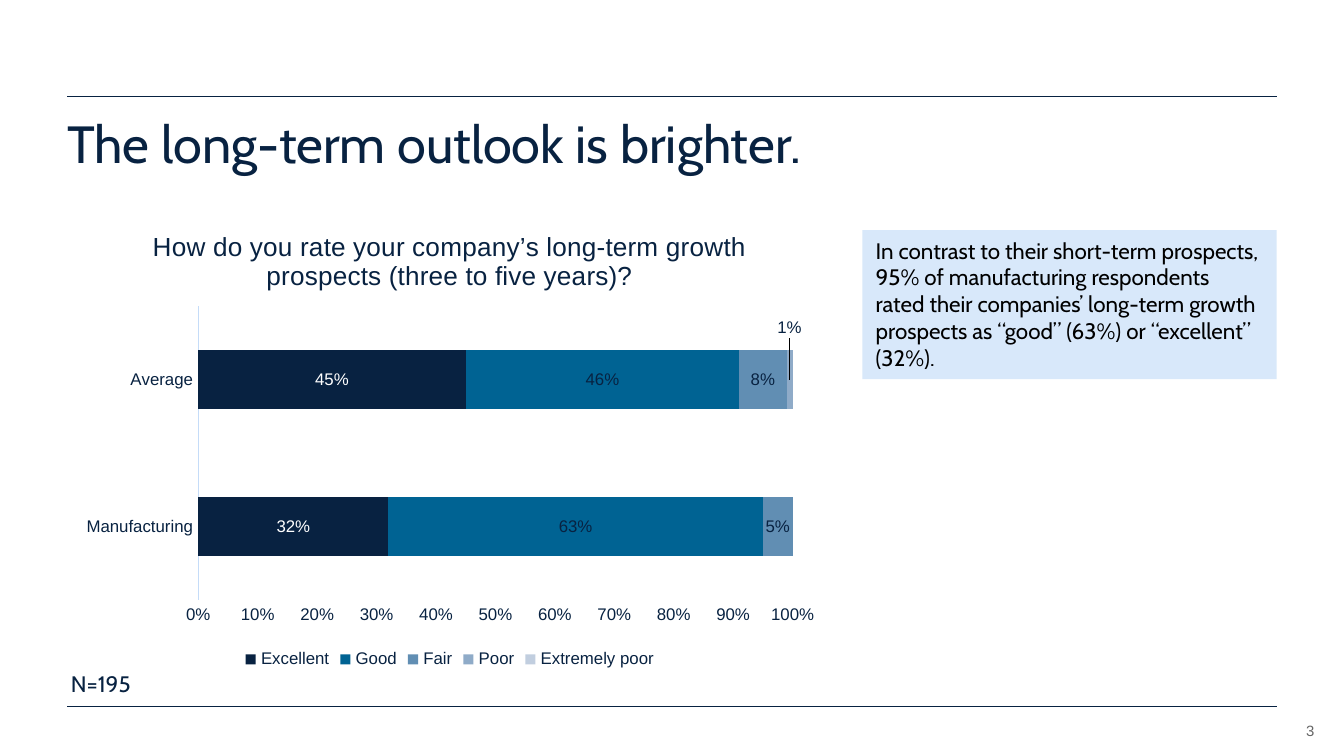
from collections import namedtuple

from lxml.etree import SubElement
from pptx import Presentation
from pptx.chart.data import CategoryChartData
from pptx.dml.color import RGBColor
from pptx.enum.chart import XL_CHART_TYPE as ChartType
from pptx.enum.chart import XL_LABEL_POSITION as LabelPosition
from pptx.enum.chart import XL_LEGEND_POSITION as LegendPosition
from pptx.enum.chart import XL_TICK_MARK as TickMark
from pptx.enum.shapes import MSO_CONNECTOR as Connector
from pptx.enum.shapes import MSO_SHAPE as Shape
from pptx.enum.text import MSO_ANCHOR as Anchor
from pptx.enum.text import MSO_AUTO_SIZE as AutoSize
from pptx.enum.text import PP_ALIGN as Align
from pptx.oxml import parse_xml
from pptx.oxml.ns import nsdecls, qn
from pptx.util import Cm, Pt

Box = namedtuple("Box", "left top width height")

COLORS = {
    "navy": "082241",
    "blue": "006393",
    "steel": "618EB3",
    "mist": "8FABC8",
    "haze": "C1CEDF",
    "axis": "C5DCF8",
    "panel": "D8E8FA",
    "gray": "666666",
    "black": "000000",
    "white": "FFFFFF",
}
CATEGORIES = ["Manufacturing", "Average"]
RATINGS = [
    ("Excellent", [0.32, 0.45], "navy", "white"),
    ("Good", [0.63, 0.46], "blue", "navy"),
    ("Fair", [0.05, 0.08], "steel", "navy"),
    ("Poor", [0, 0.01], "mist", None),
    ("Extremely poor", [0, None], "haze", None),
]


def rgb(name):
    """Return the named colour."""
    return RGBColor.from_string(COLORS[name])


def set_font(font, size, color="navy", face="Arial"):
    """Apply size, colour and typeface to a font."""
    font.name, font.size, font.bold = face, Pt(size), False
    font.color.rgb = rgb(color)


def add_text(page, box, text, size, color="navy", face="Cabin", inset=True):
    """Add a wrapped single-paragraph text box and return its frame."""
    frame = page.shapes.add_textbox(*map(Cm, box)).text_frame
    frame.word_wrap = True
    if not inset:
        frame.margin_left = frame.margin_right = 0
        frame.margin_top = frame.margin_bottom = 0
    para = frame.paragraphs[0]
    para.text = text
    set_font(para.font, size, color, face)
    return frame


def add_rules(page, box):
    """Draw a thin rule along the top and the bottom of the box."""
    for y in (box.top, box.top + box.height):
        ends = (box.left, y, box.left + box.width, y)
        rule = page.shapes.add_connector(Connector.STRAIGHT, *map(Cm, ends))
        rule.line.color.rgb = rgb("navy")
        rule.line.width = Pt(0.5)
        SubElement(rule._element.spPr, qn("a:effectLst"))


def add_heading(page, box):
    """Add the slide title."""
    frame = add_text(page, box, "The long-term outlook is brighter.", 28, inset=False)
    frame.paragraphs[0].line_spacing = 0.9


def add_callout(page, box):
    """Add the shaded panel with the finding."""
    panel = page.shapes.add_shape(Shape.RECTANGLE, *map(Cm, box))
    panel.shadow.inherit = False
    panel.fill.solid()
    panel.fill.fore_color.rgb = rgb("panel")
    panel.line.fill.background()
    frame = panel.text_frame
    frame.word_wrap = True
    frame.auto_size = AutoSize.SHAPE_TO_FIT_TEXT
    frame.vertical_anchor = Anchor.TOP
    para = frame.paragraphs[0]
    para.text = (
        "In contrast to their short-term prospects, 95% of manufacturing "
        "respondents rated their companies’ long-term growth prospects as "
        "“good” (63%) or “excellent” (32%)."
    )
    para.alignment = Align.LEFT
    set_font(para.font, 12, "black", "Cabin")


def manual_layout(**settings):
    """Build a chart layout element from its settings."""
    parts = "".join(f'<c:{key} val="{value}"/>' for key, value in settings.items())
    return parse_xml(
        f'<c:layout {nsdecls("c")}><c:manualLayout>{parts}</c:manualLayout></c:layout>'
    )


def place_plot(chart):
    """Fix the inner plot area within the chart."""
    area = chart._chartSpace.chart.plotArea
    for layout in area.findall(qn("c:layout")):
        area.remove(layout)
    area.insert(0, manual_layout(
        layoutTarget="inner", xMode="edge", yMode="edge", x=0.17, y=0.21, w=0.78, h=0.63
    ))


def style_axes(chart):
    """Style both axes without tick marks or gridlines."""
    for axis in (chart.category_axis, chart.value_axis):
        axis.has_major_gridlines = False
        axis.major_tick_mark = axis.minor_tick_mark = TickMark.NONE
        set_font(axis.tick_labels.font, 9)
    line = chart.category_axis.format.line
    line.color.rgb = rgb("axis")
    line.width = Pt(0.75)
    scale = chart.value_axis
    scale.minimum_scale, scale.maximum_scale, scale.major_unit = 0, 1, 0.1
    scale.format.line.fill.background()
    scale.tick_labels.number_format = "0%"
    scale.tick_labels.number_format_is_linked = False


def style_series(plot):
    """Colour the series and label their values."""
    plot.gap_width, plot.overlap = 150, 100
    plot.vary_by_categories = False
    for series, (name, values, color, label_color) in zip(plot.series, RATINGS):
        series.format.fill.solid()
        series.format.fill.fore_color.rgb = rgb(color)
        if label_color:
            labels = series.data_labels
            labels.show_value = True
            labels.position = LabelPosition.CENTER
            labels.number_format, labels.number_format_is_linked = "0%", False
            set_font(labels.font, 9, label_color)
        elif name == "Poor":
            series.data_labels.show_value = False
            label = series.points[1].data_label
            label.position = LabelPosition.CENTER
            set_font(label.font, 9)
            element = series.data_labels._element.find(qn("c:dLbl"))
            element.insert(1, manual_layout(x=0, y=-0.11))


def add_rating_chart(page, box):
    """Add the stacked bar chart of growth ratings."""
    data = CategoryChartData(number_format="0%")
    data.categories = CATEGORIES
    for name, values, *_ in RATINGS:
        data.add_series(name, values)
    frame = page.shapes.add_chart(ChartType.BAR_STACKED_100, *map(Cm, box), data)
    chart = frame.chart
    set_font(chart.font, 10)
    chart.has_title = True
    para = chart.chart_title.text_frame.paragraphs[0]
    para.text = (
        "How do you rate your company’s long-term growth "
        "prospects (three to five years)?"
    )
    set_font(para.font, 14)
    chart.chart_title.include_in_layout = False
    chart.has_legend = True
    chart.legend.position = LegendPosition.BOTTOM
    chart.legend.include_in_layout = False
    set_font(chart.legend.font, 9)
    place_plot(chart)
    style_axes(chart)
    style_series(chart.plots[0])


def add_page_number(page, box):
    """Add the page number in the lower right corner."""
    frame = add_text(page, box, "3", 8, "gray", "Arial", inset=False)
    frame.vertical_anchor = Anchor.BOTTOM
    frame.paragraphs[0].alignment = Align.RIGHT


def main():
    """Build the slide and save the deck."""
    deck = Presentation()
    deck.slide_width, deck.slide_height = Cm(25.4), Cm(14.29)
    page = deck.slides.add_slide(deck.slide_layouts[6])
    add_rules(page, Box(1.27, 1.83, 22.86, 11.53))
    add_page_number(page, Box(23.65, 13.51, 1.19, 0.46))
    add_heading(page, Box(1.27, 2.24, 22.86, 1.4))
    add_callout(page, Box(16.3, 4.35, 7.83, 2.82))
    add_rating_chart(page, Box(1.3, 3.94, 14.4, 8.81))
    sample = add_text(page, Box(1.09, 12.55, 4.6, 0.76), "N=195", 12)
    sample.auto_size = AutoSize.SHAPE_TO_FIT_TEXT
    deck.save("out.pptx")


if __name__ == "__main__":
    main()
